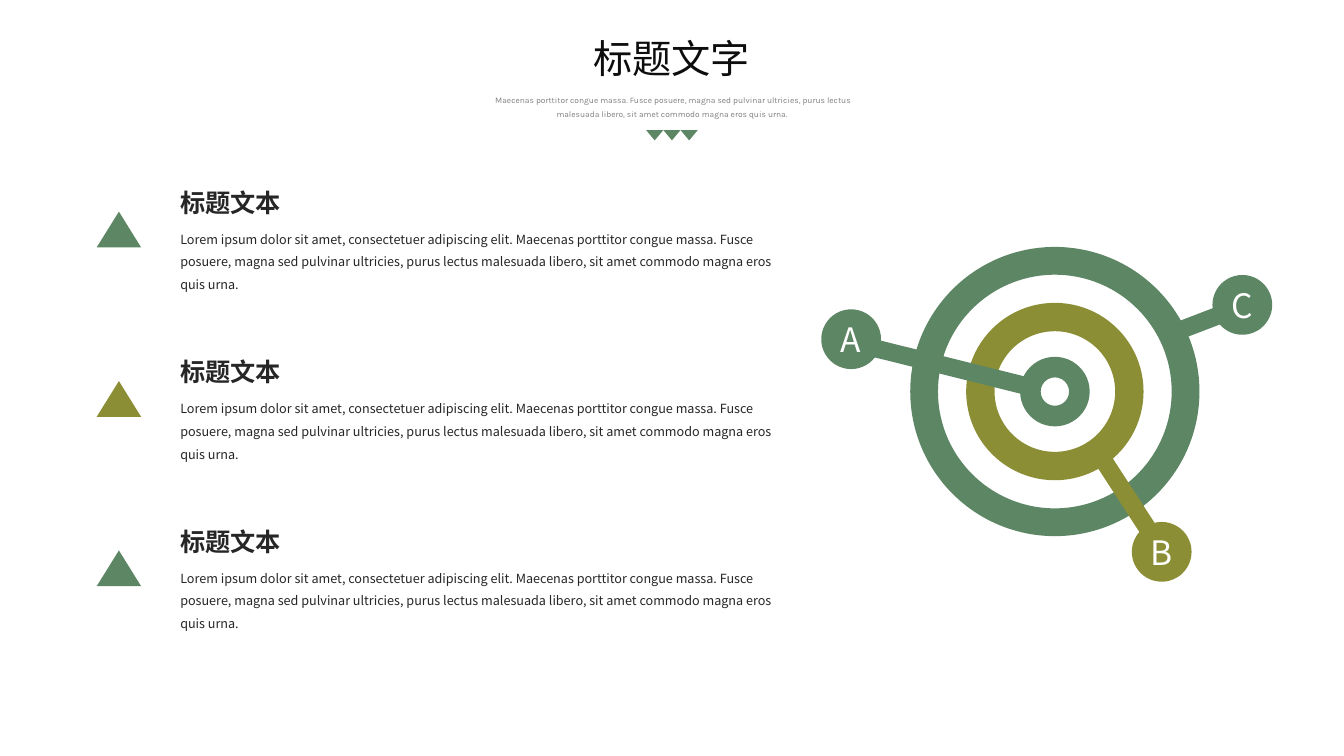
from lxml.etree import SubElement
from pptx import Presentation
from pptx.dml.color import RGBColor as RGB
from pptx.enum.shapes import MSO_SHAPE as SHAPE
from pptx.enum.text import MSO_ANCHOR as ANCHOR, MSO_AUTO_SIZE as FIT, PP_ALIGN as ALIGN
from pptx.oxml.ns import qn
from pptx.util import Inches, Pt

COLORS = {"green": "5D8665", "olive": "8C8E35", "title": "0D0D0D",
          "text": "262626", "gray": "808080", "white": "FFFFFF"}
SANS = "Noto Sans CJK SC"
WIDTH, HEIGHT = Inches(13.333), Inches(7.5)
COLS, ROWS = 96, 54
LOREM = ("Lorem ipsum dolor sit amet, consectetuer adipiscing elit. Maecenas porttitor congue "
         "massa. Fusce posuere, magna sed pulvinar ultricies, purus lectus malesuada libero, "
         "sit amet commodo magna eros quis urna.")
SUBTITLE = (" Maecenas porttitor congue massa. Fusce posuere, magna sed pulvinar ultricies, "
            "purus lectus malesuada libero, sit amet commodo magna eros quis urna.")
ITEMS = [("标题文本", LOREM, "green"), ("标题文本", LOREM, "olive"), ("标题文本", LOREM, "green")]
ITEM_PITCH = 12.1
CENTER = (75.35, 27.97)
RINGS = [(20.66, 0.096, "green"), (12.67, 0.16, "olive"), (4.97, 0.296, "green")]
POINTERS = [("B", (82.98, 39.42), (80.46, 35.42), 9.14, 57, "olive"),
            ("C", (88.74, 21.78), (85.72, 23.04), 6.12, 339, "green"),
            ("A", (60.8, 24.23), (67.39, 26.1), 12.24, 14, "green")]
BADGE, BAR = 4.27, 1.27


def box(x, y, w, h):
    """Turn grid columns and rows into slide lengths."""
    return (int(WIDTH * x / COLS), int(HEIGHT * y / ROWS),
            int(WIDTH * w / COLS), int(HEIGHT * h / ROWS))


def centered(center, w, h):
    """Return the grid box of a given size around a center."""
    return center[0] - w / 2, center[1] - h / 2, w, h


def write(tf, text, size, color, font=SANS, bold=False, align=ALIGN.LEFT, spacing=None):
    """Fill a text frame with one formatted paragraph."""
    tf.text = text
    p = tf.paragraphs[0]
    p.alignment = align
    p.line_spacing = spacing
    p.font.size, p.font.bold, p.font.name = Pt(size), bold, font
    p.font.color.rgb = RGB.from_string(COLORS[color])
    SubElement(p._p.pPr.find(qn("a:defRPr")), qn("a:ea"), typeface=font)


def add_text(shapes, area, text, size, color, wrap=True, **style):
    """Add a text box on the grid."""
    tf = shapes.add_textbox(*box(*area)).text_frame
    tf.word_wrap = wrap
    tf.auto_size = FIT.SHAPE_TO_FIT_TEXT
    write(tf, text, size, color, **style)


def add_shape(shapes, kind, area, color, rotation=0):
    """Add a flat, borderless shape on the grid."""
    sp = shapes.add_shape(kind, *box(*area))
    sp.shadow.inherit = False
    sp.fill.solid()
    sp.fill.fore_color.rgb = RGB.from_string(COLORS[color])
    sp.line.fill.background()
    sp.rotation = rotation
    return sp


def add_header(s):
    """Add the title, the subtitle and the row of small triangles."""
    group = s.shapes.add_group_shape()
    for i in range(3):
        add_shape(group.shapes, SHAPE.ISOSCELES_TRIANGLE,
                  (46.15 + 1.23 * i, 9.29, 1.23, 0.74), "green", 180)
    title = s.shapes.title
    title.left, title.top, title.width, title.height = box(41.6, 2.09, 12.76, 4.1)
    tf = title.text_frame
    tf.word_wrap = False
    tf.auto_size = FIT.SHAPE_TO_FIT_TEXT
    tf.vertical_anchor = ANCHOR.TOP
    write(tf, "标题文字", 28, "title", align=ALIGN.CENTER, spacing=1.0)
    add_text(s.shapes, (34.49, 6.19, 27, 2.66), SUBTITLE, 6, "gray",
             font="Karla", align=ALIGN.CENTER, spacing=Pt(10))


def add_ring(s, size, thickness, color):
    """Add one ring of the target."""
    ring = add_shape(s.shapes, SHAPE.DONUT, centered(CENTER, size, size), color)
    ring.adjustments[0] = thickness


def add_pointer(s, letter, badge, middle, length, angle, color):
    """Add a bar and its lettered badge."""
    add_shape(s.shapes, SHAPE.RECTANGLE, centered(middle, length, BAR), color, angle)
    sp = add_shape(s.shapes, SHAPE.OVAL, centered(badge, BADGE, BADGE), color)
    tf = sp.text_frame
    tf.word_wrap = False
    tf.vertical_anchor = ANCHOR.MIDDLE
    write(tf, letter, 24, "white", align=ALIGN.CENTER)


def add_item(s, row, heading, body, color):
    """Add a triangle with its heading and body text."""
    shapes = s.shapes.add_group_shape().shapes
    top = 13.03 + ITEM_PITCH * row
    add_shape(shapes, SHAPE.ISOSCELES_TRIANGLE, (6.91, top + 2.09, 3.17, 2.55), color)
    add_text(shapes, (12.17, top + 2.62, 44.71, 3.82), body, 9, "text", spacing=1.5)
    add_text(shapes, (12.17, top, 8.71, 2.88), heading, 18, "text", wrap=False, bold=True)


def main():
    """Build and save the slide."""
    prs = Presentation()
    prs.slide_width, prs.slide_height = WIDTH, HEIGHT
    s = prs.slides.add_slide(prs.slide_layouts[5])
    add_header(s)
    for ring in RINGS:
        add_ring(s, *ring)
    for pointer in POINTERS:
        add_pointer(s, *pointer)
    for row, item in enumerate(ITEMS):
        add_item(s, row, *item)
    prs.save("out.pptx")


if __name__ == "__main__":
    main()
